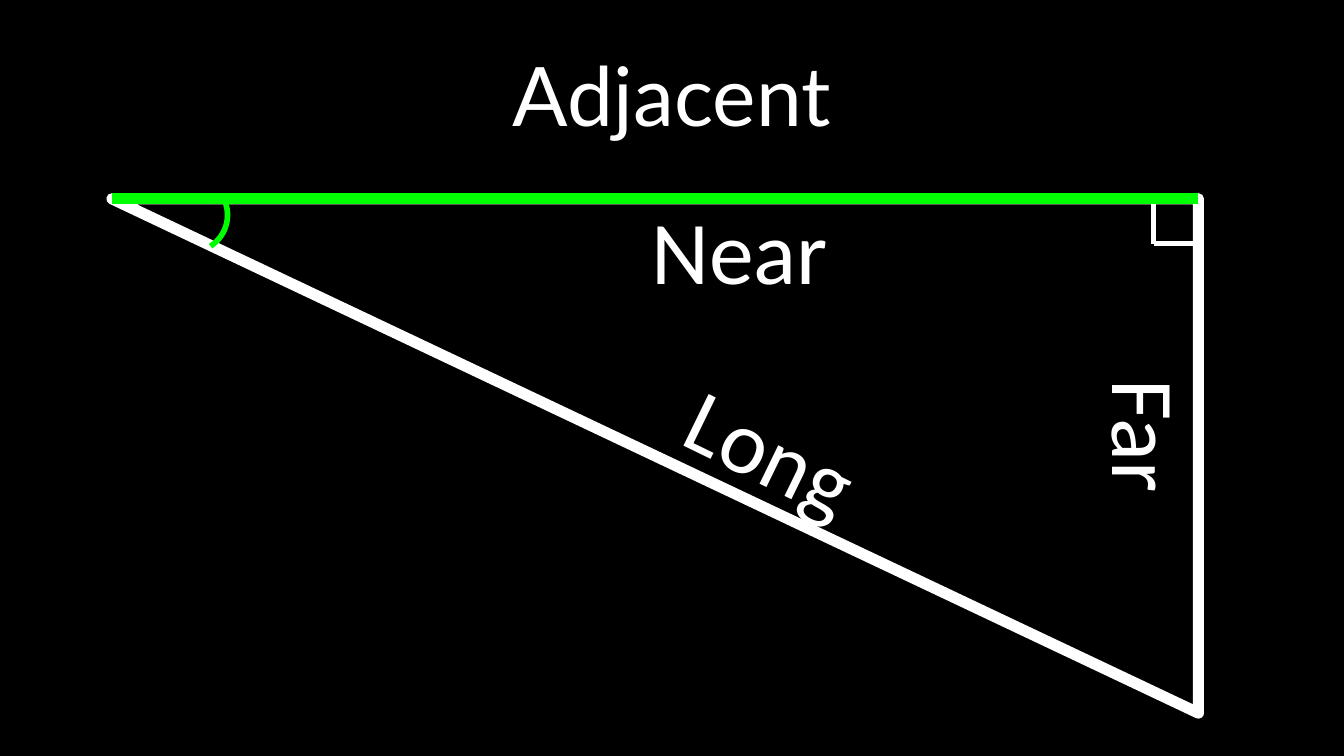
from pptx import Presentation
from pptx.dml.color import RGBColor
from pptx.enum.shapes import MSO_CONNECTOR as Connector, MSO_SHAPE as Preset
from pptx.enum.text import MSO_ANCHOR as Anchor, MSO_AUTO_SIZE as AutoSize, PP_ALIGN as Align
from pptx.oxml import parse_xml
from pptx.oxml.ns import nsdecls
from pptx.util import Pt

COLORS = {"background": "000000", "side": "FFFFFF", "adjacent": "00FF00"}
TITLE = ("Adjacent", 36, 16.5, 648, 67.5)
SIDE_NAMES = [
    ("Long", 359.3, 211.7, 121, 65.5, 26.1),
    ("Far", 573.8, 204.5, 82, 65.5, 90),
    ("Near", 342, 100.8, 116.6, 65.5, 0),
]
LEFT, TOP, RIGHT, BOTTOM = 60, 106.5, 642, 382
CORNER = 24
ANGLE_ARC = (82.8, 95.8, 38.9, 39.6, 57.1)


def paint_line(outline, color, width):
    outline.color.rgb = RGBColor.from_string(COLORS[color])
    outline.width = Pt(width)


def add_line(slide, start, end, color, width):
    ends = [Pt(value) for value in (*start, *end)]
    segment = slide.shapes.add_connector(Connector.STRAIGHT, *ends)
    paint_line(segment.line, color, width)
    segment._element.spPr.append(parse_xml(f"<a:effectLst {nsdecls('a')}/>"))


def add_outline(slide, preset, box, rotation, color, width):
    outline = slide.shapes.add_shape(preset, *[Pt(value) for value in box])
    outline.rotation = rotation
    outline.shadow.inherit = False
    outline.fill.background()
    paint_line(outline.line, color, width)


def add_label(slide, text, box, font, size, rotation=0):
    label = slide.shapes.add_textbox(*[Pt(value) for value in box])
    label.rotation = rotation
    frame = label.text_frame
    frame.text = text
    frame.word_wrap = False
    frame.auto_size = AutoSize.SHAPE_TO_FIT_TEXT
    run_font = frame.paragraphs[0].runs[0].font
    run_font.name, run_font.size = font, Pt(size)
    run_font.color.rgb = RGBColor.from_string(COLORS["side"])
    return frame


def main():
    """Build a right triangle slide that highlights the adjacent side."""
    deck = Presentation()
    deck.slide_width, deck.slide_height = Pt(720), Pt(405)
    slide = deck.slides.add_slide(deck.slide_layouts[6])
    backdrop = slide.background.fill
    backdrop.solid()
    backdrop.fore_color.rgb = RGBColor.from_string(COLORS["background"])

    corner = (RIGHT - CORNER, TOP + CORNER)
    add_line(slide, (corner[0], TOP), corner, "side", 3)
    add_line(slide, (RIGHT, corner[1]), corner, "side", 3)

    title = add_label(slide, TITLE[0], TITLE[1:], "Lato", 44)
    title.word_wrap = True
    title.auto_size = AutoSize.NONE
    title.vertical_anchor = Anchor.MIDDLE
    title.paragraphs[0].alignment = Align.CENTER

    triangle = (LEFT, TOP, RIGHT - LEFT, BOTTOM - TOP)
    add_outline(slide, Preset.RIGHT_TRIANGLE, triangle, 180, "side", 6)
    add_outline(slide, Preset.ARC, ANGLE_ARC[:4], ANGLE_ARC[4], "adjacent", 3)
    add_line(slide, (RIGHT, TOP), (LEFT, TOP), "adjacent", 6)

    for name, *box, rotation in SIDE_NAMES:
        add_label(slide, name, box, "Calibri", 48, rotation)

    deck.save("out.pptx")


if __name__ == "__main__":
    main()
